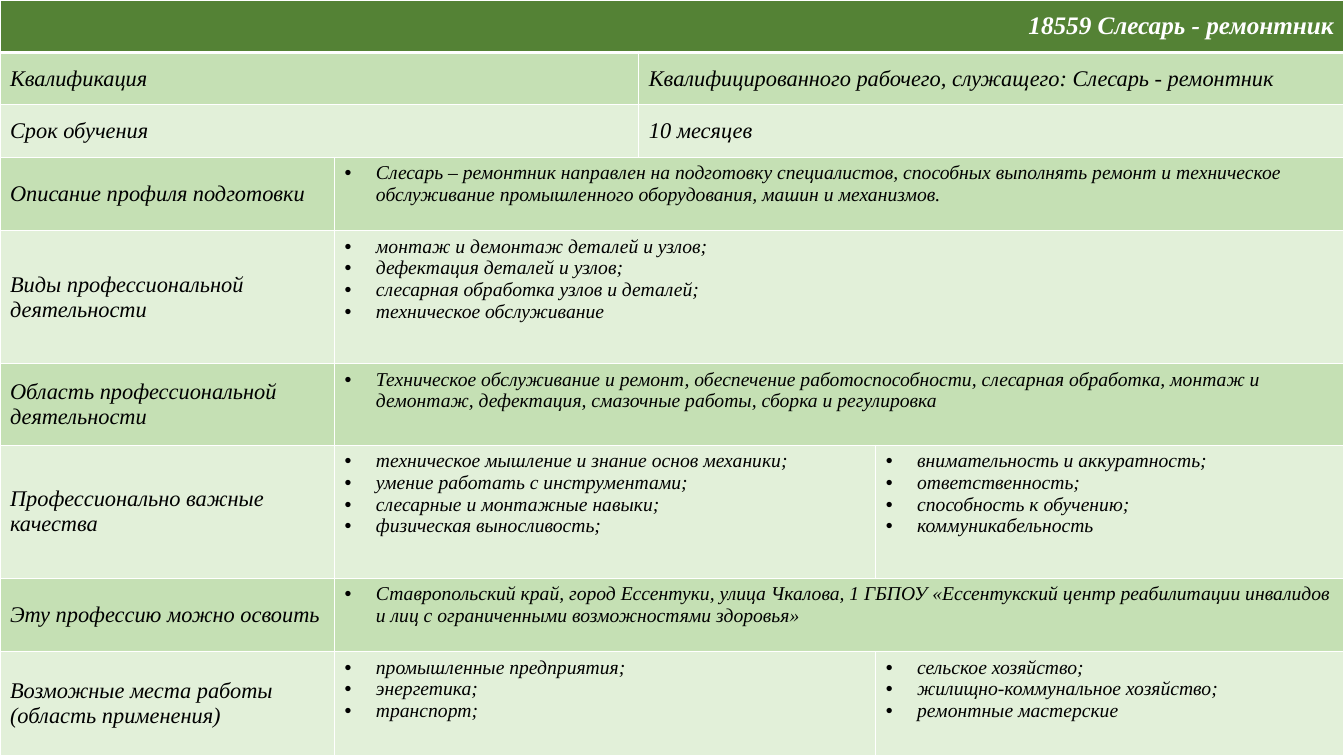
from lxml import etree
from pptx import Presentation
from pptx import util as u
from pptx.dml.color import RGBColor
from pptx.enum import text
from pptx.oxml.ns import qn

FONT = "Times New Roman"
WHITE, BLACK = "FFFFFF", "000000"
HEADER_GREEN, MID_GREEN, PALE_GREEN = "548235", "C5E0B4", "E2F0D9"
COLUMN_WIDTHS = [8.43, 7.67, 5.97, 11.8]
ROW_HEIGHTS = [1.32, 1.32, 1.32, 1.85, 3.35, 2.06, 3.35, 1.85, 2.63]
BULLET_INDENT = u.Cm(0.79)

# Each row maps a starting column to its content: a string is a label, a list is bulleted.
PROFILE = [
    {0: "18559 Слесарь - ремонтник"},
    {0: "Квалификация",
     2: "Квалифицированного рабочего, служащего: Слесарь - ремонтник"},
    {0: "Срок обучения", 2: "10 месяцев"},
    {0: "Описание профиля подготовки",
     1: ["Слесарь – ремонтник направлен на подготовку специалистов, способных выполнять "
         "ремонт и техническое обслуживание промышленного оборудования, машин и механизмов."]},
    {0: "Виды профессиональной деятельности",
     1: ["монтаж и демонтаж деталей и узлов;", "дефектация деталей и узлов;",
         "слесарная обработка узлов и деталей;", "техническое обслуживание"]},
    {0: "Область профессиональной деятельности",
     1: ["Техническое обслуживание и ремонт, обеспечение работоспособности, слесарная "
         "обработка, монтаж и демонтаж, дефектация, смазочные работы, сборка и регулировка"]},
    {0: "Профессионально важные качества",
     1: ["техническое мышление и знание основ механики;", "умение работать с инструментами;",
         "слесарные и монтажные навыки;", "физическая выносливость;"],
     3: ["внимательность и аккуратность;", "ответственность;", "способность к обучению;",
         "коммуникабельность"]},
    {0: "Эту профессию можно освоить",
     1: ["Ставропольский край, город Ессентуки, улица Чкалова, 1 ГБПОУ «Ессентукский центр "
         "реабилитации инвалидов и лиц с ограниченными возможностями здоровья»"]},
    {0: "Возможные места работы (область применения)",
     1: ["промышленные предприятия;", "энергетика;", "транспорт;"],
     3: ["сельское хозяйство;", "жилищно-коммунальное хозяйство;", "ремонтные мастерские"]},
]


def rgb(color):
    return RGBColor.from_string(color)


def set_borders(cell, top=1, bottom=1):
    """Draw white borders; must run before the cell gets its fill."""
    properties = cell._tc.get_or_add_tcPr()
    for side, points in {"L": 1, "R": 1, "T": top, "B": bottom}.items():
        line = etree.SubElement(properties, qn(f"a:ln{side}"), w=str(u.Pt(points)))
        solid = etree.SubElement(line, qn("a:solidFill"))
        etree.SubElement(solid, qn("a:srgbClr"), val=WHITE)


def add_bullet(paragraph):
    properties = paragraph._p.get_or_add_pPr()
    properties.set("marL", str(BULLET_INDENT))
    properties.set("indent", str(-BULLET_INDENT))
    etree.SubElement(properties, qn("a:buFont"), typeface="Arial")
    etree.SubElement(properties, qn("a:buChar"), char="•")


def style_font(paragraph, size, color=BLACK, bold=False):
    font = paragraph.font
    font.name, font.size = FONT, u.Pt(size)
    font.bold, font.italic = bold, True
    font.color.rgb = rgb(color)


def write_label(cell, label):
    cell.text = label
    cell.vertical_anchor = text.MSO_ANCHOR.MIDDLE
    style_font(cell.text_frame.paragraphs[0], 16)


def write_bullets(cell, items):
    cell.text = "\n".join(items)
    cell.vertical_anchor = text.MSO_ANCHOR.TOP
    for paragraph in cell.text_frame.paragraphs:
        add_bullet(paragraph)
        style_font(paragraph, 14)


def row_color(row):
    if row == 0:
        return HEADER_GREEN
    return MID_GREEN if row % 2 else PALE_GREEN


def paint_cells(table):
    for row, cells in enumerate(table.rows):
        for cell in cells.cells:
            set_borders(cell, top=3 if row == 1 else 1, bottom=3 if row == 0 else 1)
            cell.fill.solid()
            cell.fill.fore_color.rgb = rgb(row_color(row))


def fill_row(table, row, contents):
    """Write each content and stretch its cell up to the next one in the row."""
    starts = list(contents)
    ends = starts[1:] + [len(COLUMN_WIDTHS)]
    for (start, content), end in zip(contents.items(), ends):
        cell = table.cell(row, start)
        if end - start > 1:
            cell.merge(table.cell(row, end - 1))
        write = write_label if isinstance(content, str) else write_bullets
        write(cell, content)


def add_profile_table(slide):
    table = slide.shapes.add_table(
        len(ROW_HEIGHTS), len(COLUMN_WIDTHS), 0, 0,
        u.Cm(sum(COLUMN_WIDTHS)), u.Cm(sum(ROW_HEIGHTS))).table
    for column, width in zip(table.columns, COLUMN_WIDTHS):
        column.width = u.Cm(width)
    for row, height in zip(table.rows, ROW_HEIGHTS):
        row.height = u.Cm(height)
    paint_cells(table)
    for row, contents in enumerate(PROFILE):
        fill_row(table, row, contents)
    heading = table.cell(0, 0).text_frame.paragraphs[0]
    heading.alignment = text.PP_ALIGN.RIGHT
    style_font(heading, 18, WHITE, bold=True)


def main():
    prs = Presentation()
    prs.slide_width, prs.slide_height = u.Cm(33.87), u.Cm(19.05)
    slide = prs.slides.add_slide(prs.slide_layouts[6])
    add_profile_table(slide)
    prs.save("out.pptx")


if __name__ == "__main__":
    main()
